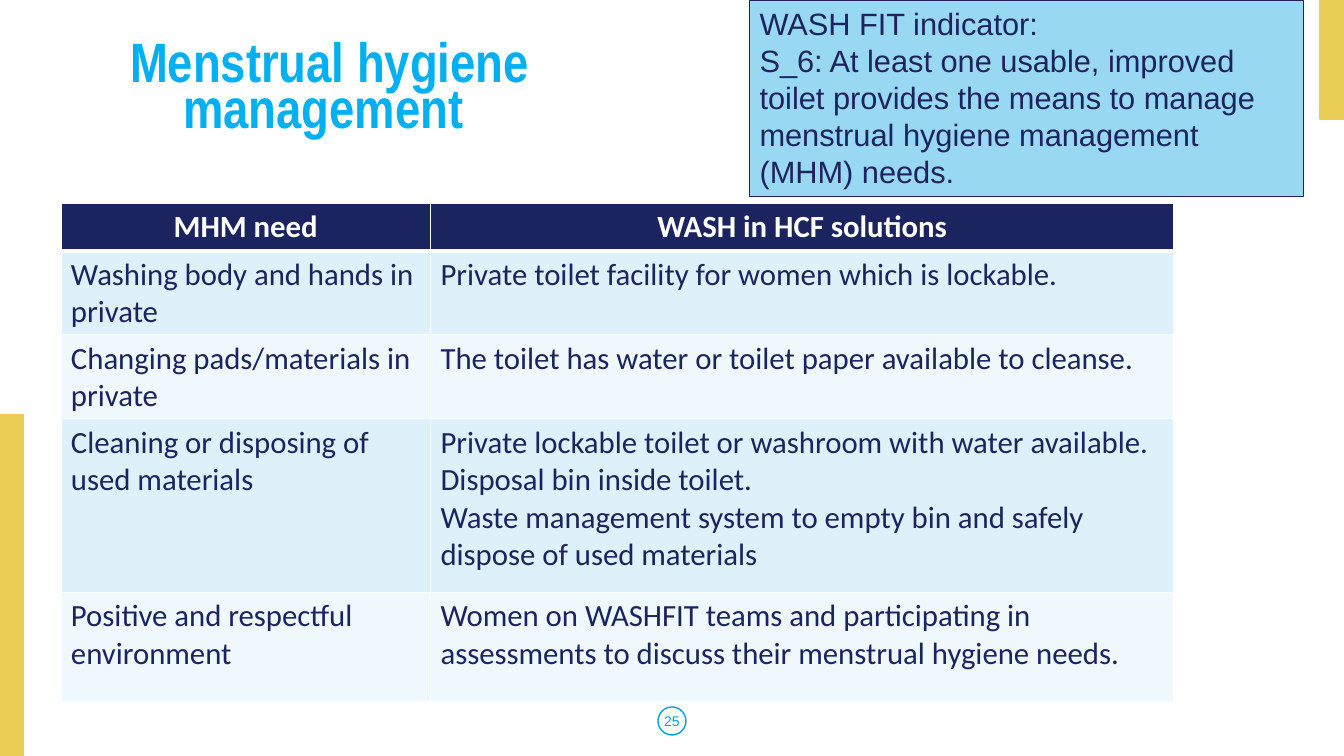
from dataclasses import dataclass
from typing import Optional

import pptx
import pptx.dml.color
import pptx.enum.shapes
import pptx.enum.text
import pptx.oxml
import pptx.oxml.ns
import pptx.util

Pt = pptx.util.Pt
RGBColor = pptx.dml.color.RGBColor
Shape = pptx.enum.shapes.MSO_SHAPE
Align = pptx.enum.text.PP_ALIGN
Anchor = pptx.enum.text.MSO_ANCHOR

NAVY = RGBColor(0x1C, 0x24, 0x5F)
WHITE = RGBColor(0xFF, 0xFF, 0xFF)
GOLD = RGBColor(0xEA, 0xCD, 0x54)
BLUE = RGBColor(0x00, 0x9E, 0xE3)
TITLE_BLUE = RGBColor(0x00, 0xB0, 0xF0)
PANEL_BLUE = RGBColor(0x99, 0xD8, 0xF3)
BANDS = (RGBColor(0xDE, 0xF0, 0xFA), RGBColor(0xEF, 0xF8, 0xFD))


@dataclass
class Figure:
    kind: Shape
    left: float
    top: float
    width: float
    height: float
    line: RGBColor
    fill: Optional[RGBColor] = None
    weight: float = 1


@dataclass
class Need:
    height: float
    name: str
    solutions: str


SIDE_BAR = Figure(Shape.RECTANGLE, 0, 296, 17, 244, GOLD, GOLD)
CORNER_BAR = Figure(Shape.RECTANGLE, 943, 0, 17, 85, GOLD, GOLD)
NUMBER_RING = Figure(Shape.OVAL, 470, 505, 20, 20, BLUE)
INDICATOR = Figure(Shape.RECTANGLE, 535.5, 0, 395.5, 140.5, NAVY, PANEL_BLUE, 0.75)

COLUMNS = (264, 531)
NEEDS = (
    Need(32, "MHM need", "WASH in HCF solutions"),
    Need(54, "Washing body and hands in private",
         "Private toilet facility for women which is lockable."),
    Need(54, "Changing pads/materials in private",
         "The toilet has water or toilet paper available to cleanse."),
    Need(124, "Cleaning or disposing of used materials",
         "Private lockable toilet or washroom with water available.\n"
         "Disposal bin inside toilet.\n"
         "Waste management system to empty bin and safely dispose of used materials"),
    Need(78, "Positive and respectful environment",
         "Women on WASHFIT teams and participating in assessments "
         "to discuss their menstrual hygiene needs."),
)


def write(frame, text: str, *, font: str, size: float, color: RGBColor,
          bold: bool = False, align: Align = Align.LEFT,
          spacing: float = 1.0, anchor: Anchor = Anchor.TOP) -> None:
    """Fill a text frame, one paragraph for each line of text."""
    frame.word_wrap = True
    frame.vertical_anchor = anchor
    for index, line in enumerate(text.split("\n")):
        para = frame.add_paragraph() if index else frame.paragraphs[0]
        para.alignment = align
        para.line_spacing = spacing
        span = para.add_run()
        span.text = line
        span.font.name = font
        span.font.size = Pt(size)
        span.font.bold = bold
        span.font.color.rgb = color


def draw(page, figure: Figure):
    shape = page.shapes.add_shape(figure.kind, Pt(figure.left), Pt(figure.top),
                                  Pt(figure.width), Pt(figure.height))
    shape.shadow.inherit = False
    if figure.fill is None:
        shape.fill.background()
    else:
        shape.fill.solid()
        shape.fill.fore_color.rgb = figure.fill
    shape.line.color.rgb = figure.line
    shape.line.width = Pt(figure.weight)
    return shape


def text_box(page, left: float, top: float, width: float, height: float):
    return page.shapes.add_textbox(Pt(left), Pt(top), Pt(width), Pt(height)).text_frame


def set_borders(cell, color: RGBColor, bottom: float) -> None:
    properties = cell._tc.get_or_add_tcPr()
    widths = {"lnL": 1, "lnR": 1, "lnT": 1, "lnB": bottom}
    for index, (side, width) in enumerate(widths.items()):
        properties.insert(index, pptx.oxml.parse_xml(
            f'<a:{side} {pptx.oxml.ns.nsdecls("a")} w="{int(Pt(width))}">'
            f'<a:solidFill><a:srgbClr val="{color}"/></a:solidFill></a:{side}>'))


def draw_needs(page) -> None:
    total = sum(need.height for need in NEEDS)
    table = page.shapes.add_table(len(NEEDS), len(COLUMNS), Pt(43.5), Pt(145.5),
                                  Pt(sum(COLUMNS)), Pt(total)).table
    for column, width in zip(table.columns, COLUMNS):
        column.width = Pt(width)
    for number, need in enumerate(NEEDS):
        table.rows[number].height = Pt(need.height)
        header = number == 0
        for cell, text in zip(table.rows[number].cells, (need.name, need.solutions)):
            cell.fill.solid()
            cell.fill.fore_color.rgb = NAVY if header else BANDS[(number - 1) % 2]
            set_borders(cell, WHITE, 3 if header else 1)
            write(cell.text_frame, text, font="Calibri", size=22, bold=header,
                  color=WHITE if header else NAVY,
                  align=Align.CENTER if header else Align.LEFT)


def main() -> None:
    deck = pptx.Presentation()
    deck.slide_width, deck.slide_height = Pt(960), Pt(540)
    page = deck.slides.add_slide(deck.slide_layouts[6])

    # Page frame and number
    for figure in (SIDE_BAR, CORNER_BAR, NUMBER_RING):
        draw(page, figure)
    write(text_box(page, 0, 500.5, 960, 29), "25", font="Arial", size=10,
          color=BLUE, align=Align.CENTER, anchor=Anchor.MIDDLE)

    # Title
    write(text_box(page, 29, 24.5, 413, 81.5), "Menstrual hygiene management ",
          font="Arial Narrow", size=39.6, color=TITLE_BLUE, bold=True,
          align=Align.CENTER, spacing=0.7, anchor=Anchor.MIDDLE)

    # Needs and solutions
    draw_needs(page)

    # Indicator panel
    write(draw(page, INDICATOR).text_frame,
          "WASH FIT indicator:\n"
          "S_6: At least one usable, improved toilet provides the means to manage "
          "menstrual hygiene management (MHM) needs.",
          font="Arial", size=22, color=NAVY)

    deck.save("out.pptx")


if __name__ == "__main__":
    main()
